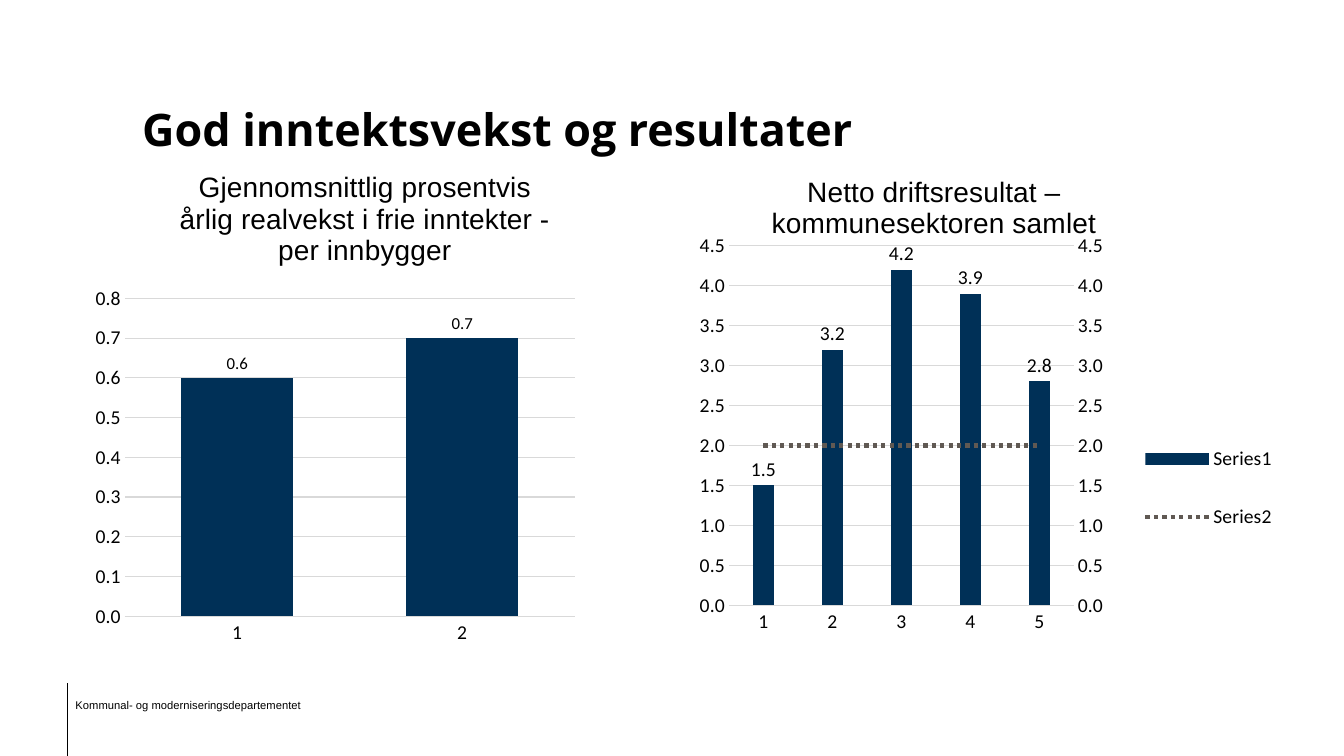
from copy import deepcopy

from lxml import etree
from pptx import Presentation
from pptx.chart.data import CategoryChartData
from pptx.dml.color import RGBColor
from pptx.enum.chart import (XL_CHART_TYPE, XL_LABEL_POSITION, XL_LEGEND_POSITION,
                             XL_MARKER_STYLE, XL_TICK_MARK)
from pptx.enum.dml import MSO_LINE
from pptx.enum.shapes import MSO_CONNECTOR
from pptx.enum.text import MSO_ANCHOR, PP_ALIGN
from pptx.oxml.ns import qn
from pptx.util import Inches, Pt

COLUMNS = XL_CHART_TYPE.COLUMN_CLUSTERED
LABEL_ABOVE = XL_LABEL_POSITION.OUTSIDE_END
LEGEND_RIGHT = XL_LEGEND_POSITION.RIGHT
NO_TICK = XL_TICK_MARK.NONE
NO_MARKER = XL_MARKER_STYLE.NONE
DOTTED = MSO_LINE.ROUND_DOT
STRAIGHT = MSO_CONNECTOR.STRAIGHT
BOTTOM = MSO_ANCHOR.BOTTOM
LEFT = PP_ALIGN.LEFT

BLACK = RGBColor(0x00, 0x00, 0x00)
NAVY = RGBColor(0x00, 0x30, 0x57)
BROWN_GREY = RGBColor(0x60, 0x59, 0x53)
GRID_GREY = RGBColor(0xD9, 0xD9, 0xD9)
NUMBER_FORMAT = "#,##0.0"


def style_font(font, size, name="Calibri", bold=False):
    font.size = Pt(size)
    font.name = name
    font.bold = bold
    font.color.rgb = BLACK


def write_text(frame, text, size, name, bold=False, spacing=None):
    para = frame.paragraphs[0]
    para.line_spacing = spacing
    span = para.add_run()
    span.text = text
    style_font(span.font, size, name, bold)
    return para


def place_part(parent, index, x, y, w=None, h=None, inner=False):
    layout = parent.find(qn("c:layout"))
    if layout is None:
        layout = etree.Element(qn("c:layout"))
        parent.insert(index, layout)
    manual = etree.SubElement(layout, qn("c:manualLayout"))
    values = {"layoutTarget": "inner" if inner else None, "xMode": "edge",
              "yMode": "edge", "x": x, "y": y, "w": w, "h": h}
    for tag, value in values.items():
        if value is not None:
            etree.SubElement(manual, qn(f"c:{tag}")).set("val", str(value))


class SlideBuilder:
    def __init__(self, page):
        self.page = page

    def title(self, text, left, top, width, height):
        box = self.page.shapes.title
        box.left, box.top, box.width, box.height = map(Inches, (left, top, width, height))
        box.text_frame.vertical_anchor = BOTTOM
        write_text(box.text_frame, text, 32, "Open Sans", bold=True).alignment = LEFT

    def text(self, text, left, top, width, height):
        box = self.page.shapes.add_textbox(*map(Inches, (left, top, width, height)))
        box.text_frame.word_wrap = True
        write_text(box.text_frame, text, 8, "Arial", spacing=0.9)

    def line(self, x1, y1, x2, y2):
        line = self.page.shapes.add_connector(STRAIGHT, *map(Inches, (x1, y1, x2, y2)))
        line.line.color.rgb = BLACK
        line.line.width = Pt(0.75)
        etree.SubElement(line._element.spPr, qn("a:effectLst"))

    def column_chart(self, frame, title, title_place, plot_place, series, maximum, step,
                     gap, overlap, label_size):
        data = CategoryChartData(number_format=NUMBER_FORMAT)
        data.categories = [str(n + 1) for n in range(len(series[0][1]))]
        for name, values in series:
            data.add_series(name, values)
        chart = self.page.shapes.add_chart(COLUMNS, *map(Inches, frame), data).chart
        style_font(chart.font, 14)
        chart.has_legend = False
        chart.has_title = True
        write_text(chart.chart_title.text_frame, title, 20, "Arial")
        place_part(chart.element.find(".//" + qn("c:title")), 1, *title_place)
        place_part(chart.element.find(".//" + qn("c:plotArea")), 0, *plot_place, inner=True)

        for axis in (chart.category_axis, chart.value_axis):
            axis.major_tick_mark = axis.minor_tick_mark = NO_TICK
            style_font(axis.tick_labels.font, 14)
        chart.category_axis.format.line.color.rgb = GRID_GREY
        chart.category_axis.format.line.width = Pt(0.75)
        values = chart.value_axis
        values.minimum_scale, values.maximum_scale, values.major_unit = 0, maximum, step
        values.tick_labels.number_format = NUMBER_FORMAT
        values.tick_labels.number_format_is_linked = False
        values.format.line.fill.background()
        values.has_major_gridlines = True
        values.major_gridlines.format.line.color.rgb = GRID_GREY
        values.major_gridlines.format.line.width = Pt(0.75)

        plot = chart.plots[0]
        plot.vary_by_categories = False
        plot.gap_width, plot.overlap = gap, overlap
        columns = plot.series[0]
        columns.format.fill.solid()
        columns.format.fill.fore_color.rgb = NAVY
        labels = columns.data_labels
        labels.show_value = True
        labels.position = LABEL_ABOVE
        labels.number_format = NUMBER_FORMAT
        labels.number_format_is_linked = False
        style_font(labels.font, label_size)
        return chart

    def last_series_as_line(self, chart):
        bars = chart.element.find(".//" + qn("c:barChart"))
        series = bars.findall(qn("c:ser"))[-1]
        for invert in series.findall(qn("c:invertIfNegative")):
            series.remove(invert)
        lines = bars.makeelement(qn("c:lineChart"))
        bars.addnext(lines)
        etree.SubElement(lines, qn("c:grouping")).set("val", "standard")
        etree.SubElement(lines, qn("c:varyColors")).set("val", "0")
        lines.append(series)
        etree.SubElement(lines, qn("c:marker")).set("val", "1")

        area = bars.getparent()
        first_axes = [area.find(qn("c:catAx")), area.find(qn("c:valAx"))]
        last = first_axes[-1]
        for first, number, partner, hidden, side in zip(
                first_axes, ("5001", "5002"), ("5002", "5001"), ("1", "0"), ("b", "r")):
            axis = deepcopy(first)
            settings = {"axId": number, "crossAx": partner, "delete": hidden, "axPos": side,
                        "crosses": "max" if side == "r" else "autoZero"}
            for tag, value in settings.items():
                axis.find(qn(f"c:{tag}")).set("val", value)
            for grid in axis.findall(qn("c:majorGridlines")):
                axis.remove(grid)
            last.addnext(axis)
            last = axis
            etree.SubElement(lines, qn("c:axId")).set("val", number)

        target = chart.plots[1].series[0]
        target.smooth = False
        target.marker.style = NO_MARKER
        target.format.line.color.rgb = BROWN_GREY
        target.format.line.width = Pt(3)
        target.format.line.dash_style = DOTTED

    def legend(self, chart, place):
        chart.has_legend = True
        chart.legend.position = LEGEND_RIGHT
        chart.legend.include_in_layout = False
        style_font(chart.legend.font, 14)
        place_part(chart.element.find(".//" + qn("c:legend")), 1, *place)


def main():
    deck = Presentation()
    deck.slide_width, deck.slide_height = Inches(13.33), Inches(7.5)
    slide = SlideBuilder(deck.slides.add_slide(deck.slide_layouts[5]))
    slide.text("Kommunal- og moderniseringsdepartementet", 0.65, 6.89, 2.83, 0.22)
    slide.line(0.67, 6.78, 0.67, 7.5)
    slide.title("God inntektsvekst og resultater", 1.31, 0.34, 10.71, 1.25)
    slide.column_chart(
        (0.84, 1.58, 4.96, 4.93),
        "Gjennomsnittlig prosentvis årlig realvekst i frie inntekter - per innbygger",
        (0.18, 0.01), (0.08, 0.28, 0.9, 0.64), [("Series 1", (0.6, 0.7))],
        maximum=0.8, step=0.1, gap=100, overlap=-24, label_size=12)
    results = slide.column_chart(
        (6.67, 1.58, 6.22, 4.76), "Netto driftsresultat – kommunesektoren samlet",
        (0.15, 0.02), (0.09, 0.18, 0.55, 0.75),
        [("Series1", (1.5, 3.2, 4.2, 3.9, 2.8)), ("Series2", (2, 2, 2, 2, 2))],
        maximum=4.5, step=0.5, gap=219, overlap=0, label_size=14)
    slide.last_series_as_line(results)
    slide.legend(results, (0.74, 0.53, 0.23, 0.31))
    deck.save("out.pptx")


if __name__ == "__main__":
    main()
